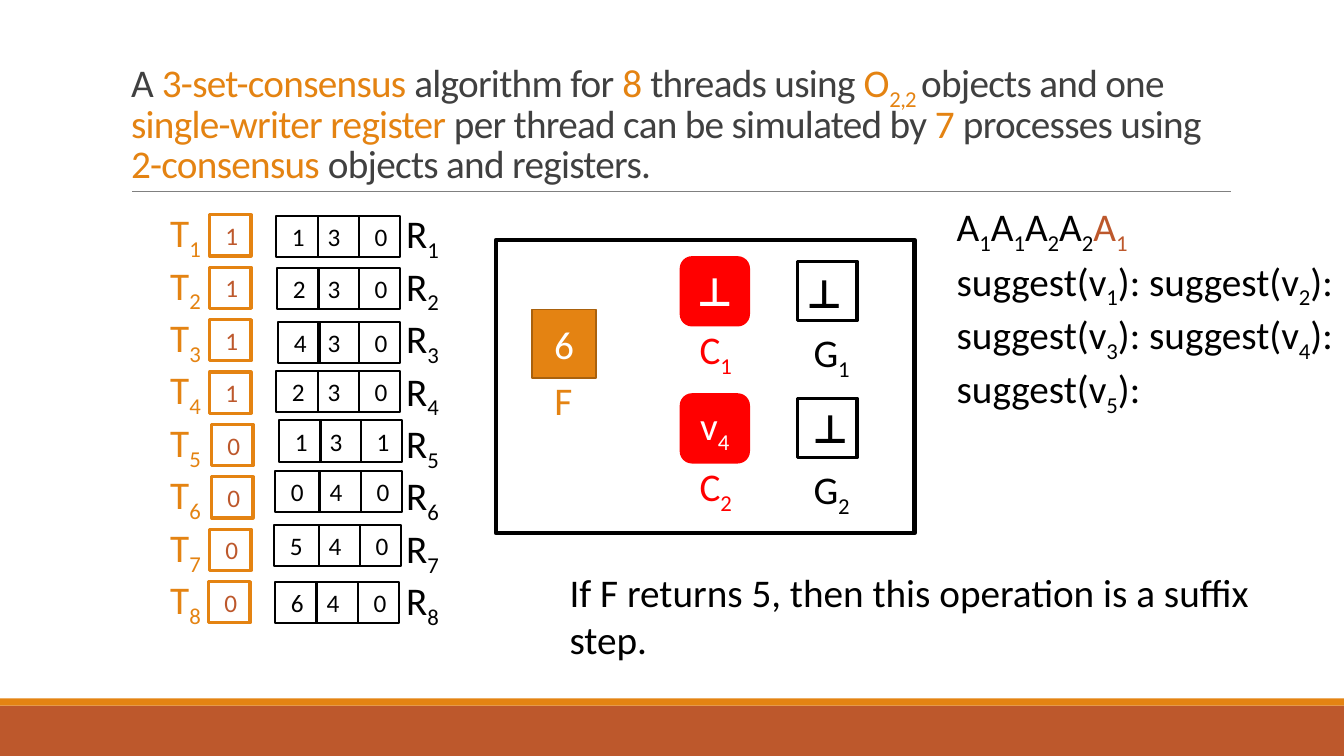
from pptx import Presentation, util as u
from pptx.dml.color import RGBColor
from pptx.enum import shapes, text
from pptx.oxml.ns import qn
from lxml import etree

BLACK = RGBColor(0x00, 0x00, 0x00)
WHITE = RGBColor(0xFF, 0xFF, 0xFF)
RED = RGBColor(0xFF, 0x00, 0x00)
ORANGE = RGBColor(0xE4, 0x83, 0x12)
BROWN = RGBColor(0xA9, 0x61, 0x0D)
RUST = RGBColor(0xBD, 0x58, 0x2C)
DARK = RGBColor(0x40, 0x40, 0x40)
GREY = RGBColor(0x80, 0x80, 0x80)

RECT = shapes.MSO_SHAPE.RECTANGLE
ROUND = shapes.MSO_SHAPE.ROUNDED_RECTANGLE
LEFT, MID = text.PP_ALIGN.LEFT, text.PP_ALIGN.CENTER
TOP, CENTER, BOTTOM = (text.MSO_ANCHOR.TOP, text.MSO_ANCHOR.MIDDLE,
                       text.MSO_ANCHOR.BOTTOM)

STEP = 52   # height of one thread row
CELL = 41   # side of a small cell

# Thread bit and its left edge, register values, left edges of the
# first two register cells, and their top edge
ROWS = [
    (1, 208, (1, 3, 0), 274, 315, 214),
    (1, 208, (2, 3, 0), 275, 315, 266),
    (1, 208, (4, 3, 0), 276, 315, 319),
    (1, 208, (2, 3, 0), 274, 315, 368),
    (0, 210, (1, 3, 1), 277, 317, 417),
    (0, 210, (0, 4, 0), 273, 317, 467),
    (0, 208, (5, 4, 0), 272, 316, 521),
    (0, 207, (6, 4, 0), 273, 314, 577),
]

TITLE = [
    ("A ", DARK), ("3-set-consensus", ORANGE), (" algorithm for ", DARK),
    ("8 ", ORANGE), ("threads using ", DARK), ("O_2,2 _", ORANGE),
    ("objects and one ", DARK), ("single-writer register ", ORANGE),
    ("per thread can be simulated by ", DARK), ("7", ORANGE),
    (" processes using ", DARK), ("2-consensus", ORANGE),
    (" objects and registers.", DARK),
]


def px(n):
    return u.Inches(n / 100)


def write(frame, *lines, color=BLACK, size=28, bold=False, align=LEFT,
          anchor=TOP, wrap=True, gap=None, track=None):
    """Each line is a string or (string, color) pairs; _ toggles subscript."""
    frame.word_wrap = wrap
    frame.auto_size = text.MSO_AUTO_SIZE.NONE
    frame.vertical_anchor = anchor
    for i, line in enumerate(lines):
        para = frame.add_paragraph() if i else frame.paragraphs[0]
        para.alignment = align
        if gap:
            para.line_spacing = gap
        parts = [(line, color)] if isinstance(line, str) else line
        for words, tint in parts:
            for k, piece in enumerate(words.split("_")):
                if not piece:
                    continue
                run = para.add_run()
                run.text = piece
                font = run.font
                font.name, font.size, font.bold = "Calibri", u.Pt(size), bold
                font.color.rgb = tint
                props = run._r.get_or_add_rPr()
                if k % 2:
                    props.set("baseline", "-25000")
                if track:
                    props.set("spc", str(track))


def label(slide, x, y, w, h, *lines, **style):
    area = slide.shapes.add_textbox(px(x), px(y), px(w), px(h))
    write(area.text_frame, *lines, **style)


def box(slide, x, y, w, h, words="", kind=RECT, fill=None, line=None,
        width=1.5, **style):
    shape = slide.shapes.add_shape(kind, px(x), px(y), px(w), px(h))
    shape.shadow.inherit = False
    if fill is None:
        shape.fill.background()
    else:
        shape.fill.solid()
        shape.fill.fore_color.rgb = fill
    if line is None:
        shape.line.fill.background()
    else:
        shape.line.color.rgb = line
        shape.line.width = u.Pt(width)
    if words:
        write(shape.text_frame, words, anchor=CENTER, **style)


def rule(slide, x, y, end):
    line = slide.shapes.add_connector(shapes.MSO_CONNECTOR.STRAIGHT,
                                      px(x), px(y), px(end), px(y))
    line.line.color.rgb = GREY
    line.line.width = u.Pt(0.5)
    etree.SubElement(line._element.spPr, qn("a:effectLst"))


def head(slide):
    title = slide.shapes.title
    title.left, title.top = px(120), px(31)
    title.width, title.height = px(1119), px(159)
    write(title.text_frame, TITLE, anchor=BOTTOM, gap=0.85, track=-50)


def thread(slide, i, bit, x, vals, first, second, top):
    y = 202 + STEP * i
    label(slide, 159, y, 53, 57, f"T_{i + 1}", color=ORANGE, wrap=False)
    label(slide, 393, y + 1, 55, 57, f"R_{i + 1}", wrap=False)
    box(slide, x, y + 11, CELL, CELL, f" {bit}", line=ORANGE, width=2.25,
        size=18, color=RUST)
    a, b, c = vals
    wide = max(CELL, second - first)
    for left, w, words in ((first, wide, f" {a}"), (second, CELL, f"{b}"),
                           (second + CELL, CELL, f" {c}")):
        box(slide, left, top, w, CELL, words, line=BLACK, size=18)


def state(slide):
    box(slide, 492, 238, 415, 291, line=BLACK, width=3)
    box(slide, 528, 307, 63, 68, "6", fill=ORANGE, line=BROWN, width=1.25,
        color=WHITE, align=MID)
    label(slide, 540, 368, 47, 57, "F", color=ORANGE)
    # Objects C and G, one pair per row
    for n, y, words, x, up in ((1, 255, "⊥", 788, 262),
                               (2, 391, "v_4", 794, 396)):
        box(slide, 675, y, 68, 68, words, kind=ROUND, fill=RED, line=RED,
            width=1.25, color=WHITE, bold=words == "⊥", align=MID)
        label(slide, 684, y + 63, 68, 57, f"C_{n}", color=RED)
        box(slide, 791, y + 4, 59, 59, line=BLACK, width=2.25)
        label(slide, x, up, 59, 57, "⊥", bold=True, align=MID, wrap=False)
        label(slide, 797, y + 66, 68, 57, f"G_{n}")


def main():
    deck = Presentation()
    deck.slide_width, deck.slide_height = px(1333), px(750)
    slide = deck.slides.add_slide(deck.slide_layouts[5])

    # Footer bands and title
    box(slide, 0, 700, 1333, 50, fill=RUST)
    box(slide, 0, 693, 1333, 7, fill=ORANGE)
    rule(slide, 131, 190, 1221)
    head(slide)

    # Threads with their registers
    for i, row in enumerate(ROWS):
        thread(slide, i, *row)

    # Shared objects
    state(slide)

    # Schedule and remark
    label(slide, 939, 196, 208, 57, [("A_1_A_1_A_2_A_2", BLACK),
                                     ("A_1", RUST)])
    label(slide, 939, 250, 394, 246, "suggest(v_1_): suggest(v_2_):",
          "suggest(v_3_): suggest(v_4_):", "suggest(v_5_):")
    label(slide, 555, 559, 772, 104,
          "If F returns 5, then this operation is a suffix step.")

    deck.save("out.pptx")


if __name__ == "__main__":
    main()
